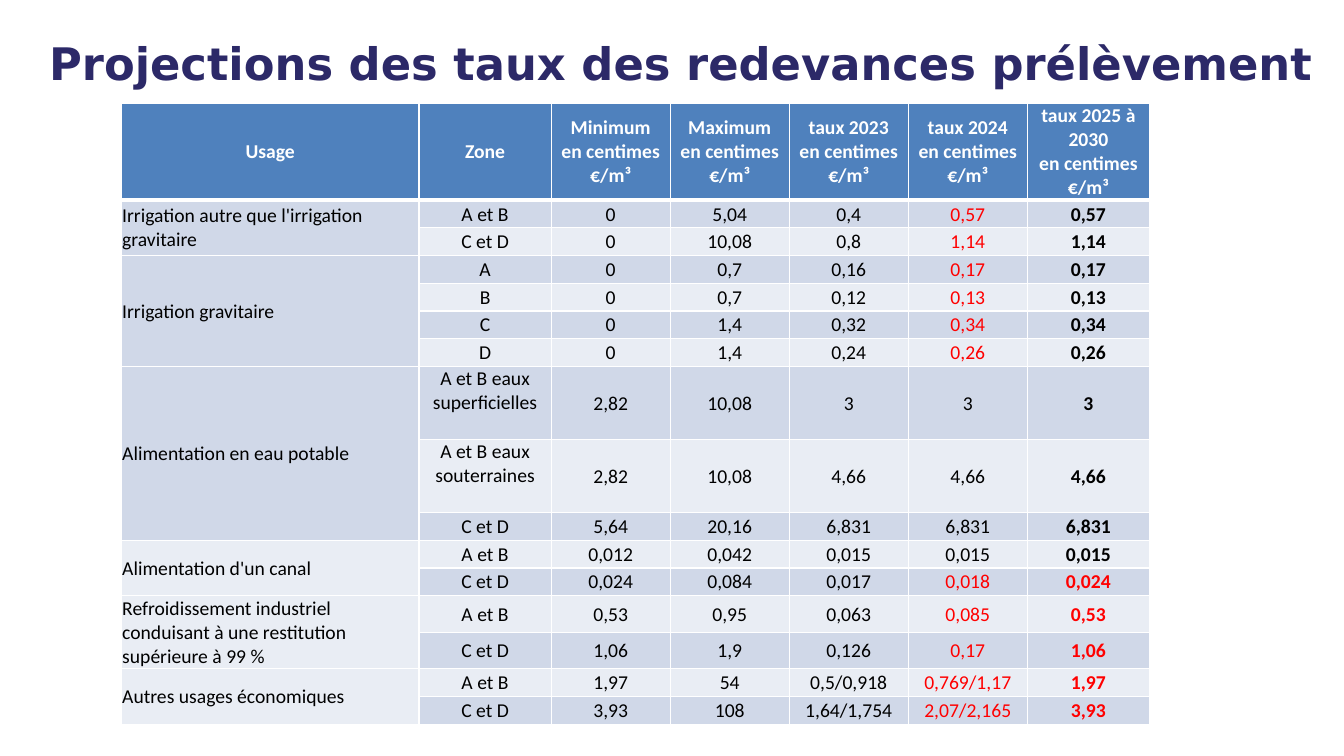
from lxml.etree import SubElement
from pptx import Presentation
from pptx.dml.color import RGBColor
from pptx.enum.text import MSO_ANCHOR as Anchor, PP_ALIGN as Align
from pptx.oxml.ns import qn
from pptx.util import Cm, Pt

NAVY = RGBColor(0x2C, 0x29, 0x68)
BLUE = RGBColor(0x4F, 0x81, 0xBD)
BAND_DARK = RGBColor(0xD0, 0xD8, 0xE8)
BAND_LIGHT = RGBColor(0xE9, 0xED, 0xF4)
WHITE = RGBColor(0xFF, 0xFF, 0xFF)
BLACK = RGBColor(0x00, 0x00, 0x00)
RED = RGBColor(0xFF, 0x00, 0x00)

UNIT = "en centimes €/m³"
HEADERS = ["Usage", "Zone"] + [
    f"{label}\n{UNIT}"
    for label in ("Minimum", "Maximum", "taux 2023", "taux 2024", "taux 2025 à 2030")
]
# Each usage with its rows: zone, minimum, maximum, rates 2023, 2024, 2025-2030
USAGES = [
    ("Irrigation autre que l'irrigation gravitaire", [
        ("A et B", "0", "5,04", "0,4", "0,57", "0,57"),
        ("C et D", "0", "10,08", "0,8", "1,14", "1,14"),
    ]),
    ("Irrigation gravitaire", [
        ("A", "0", "0,7", "0,16", "0,17", "0,17"),
        ("B", "0", "0,7", "0,12", "0,13", "0,13"),
        ("C", "0", "1,4", "0,32", "0,34", "0,34"),
        ("D", "0", "1,4", "0,24", "0,26", "0,26"),
    ]),
    ("Alimentation en eau potable", [
        ("A et B eaux superficielles", "2,82", "10,08", "3", "3", "3"),
        ("A et B eaux souterraines", "2,82", "10,08", "4,66", "4,66", "4,66"),
        ("C et D", "5,64", "20,16", "6,831", "6,831", "6,831"),
    ]),
    ("Alimentation d'un canal", [
        ("A et B", "0,012", "0,042", "0,015", "0,015", "0,015"),
        ("C et D", "0,024", "0,084", "0,017", "0,018", "0,024"),
    ]),
    ("Refroidissement industriel conduisant à une restitution supérieure à 99 %", [
        ("A et B", "0,53", "0,95", "0,063", "0,085", "0,53"),
        ("C et D", "1,06", "1,9", "0,126", "0,17", "1,06"),
    ]),
    ("Autres usages économiques", [
        ("A et B", "1,97", "54", "0,5/0,918", "0,769/1,17", "1,97"),
        ("C et D", "3,93", "108", "1,64/1,754", "2,07/2,165", "3,93"),
    ]),
]
COLUMN_WIDTHS = [7.5, 3.33, 3, 3, 3, 3, 3.08]
ROW_HEIGHTS = [2.44] + [0.7] * 6 + [1.84] * 2 + [0.7] * 3 + [0.92] * 2 + [0.7] * 2
RATE_2024, RATE_2025 = 5, 6


def write_text(frame, text, font="Calibri", size=14, color=BLACK, bold=False,
               align=Align.CENTER):
    frame.word_wrap = True
    paragraph = frame.paragraphs[0]
    paragraph.text = text.replace("\n", "\v")
    paragraph.alignment = align
    for run in paragraph.runs:
        run.font.name = font
        run.font.size = Pt(size)
        run.font.bold = bold
        run.font.color.rgb = color


def format_cell(cell, fill, top=1, bottom=1):
    """Set margins, white borders (widths in points) and fill."""
    cell.margin_left = cell.margin_right = cell.margin_top = Cm(0.02)
    cell.margin_bottom = Cm(0)
    cell.vertical_anchor = Anchor.MIDDLE
    properties = cell._tc.get_or_add_tcPr()
    for side, width in (("L", 1), ("R", 1), ("T", top), ("B", bottom)):
        line = SubElement(properties, qn(f"a:ln{side}"), w=str(Pt(width)))
        line_fill = SubElement(line, qn("a:solidFill"))
        SubElement(line_fill, qn("a:srgbClr"), val=str(WHITE))
    cell.fill.solid()
    cell.fill.fore_color.rgb = fill


presentation = Presentation()
presentation.slide_width = Cm(33.87)
presentation.slide_height = Cm(19.05)
slide = presentation.slides.add_slide(presentation.slide_layouts[6])

title = slide.shapes.add_textbox(Cm(0.48), Cm(0), Cm(33.38), Cm(3.18))
title.text_frame.vertical_anchor = Anchor.MIDDLE
write_text(title.text_frame, "Projections des taux des redevances prélèvement",
           font="DejaVu Sans", size=32, color=NAVY, bold=True)

table = slide.shapes.add_table(
    len(ROW_HEIGHTS), len(COLUMN_WIDTHS), Cm(3.06), Cm(2.6),
    Cm(sum(COLUMN_WIDTHS)), Cm(sum(ROW_HEIGHTS))).table
table.horz_banding = False
for column, width in zip(table.columns, COLUMN_WIDTHS):
    column.width = Cm(width)
for row, height in zip(table.rows, ROW_HEIGHTS):
    row.height = Cm(height)

for column_index, header in enumerate(HEADERS):
    cell = table.cell(0, column_index)
    format_cell(cell, BLUE, bottom=3)
    write_text(cell.text_frame, header, color=WHITE, bold=True)

row_index = 1
for usage, zone_rows in USAGES:
    usage_cell = table.cell(row_index, 0)
    usage_cell.merge(table.cell(row_index + len(zone_rows) - 1, 0))
    write_text(usage_cell.text_frame, usage, align=Align.LEFT)
    for values in zone_rows:
        band = BAND_DARK if row_index % 2 else BAND_LIGHT
        for cell in table.rows[row_index].cells:
            format_cell(cell, band, top=3 if row_index == 1 else 1)
        for column_index, value in enumerate(values, start=1):
            cell = table.cell(row_index, column_index)
            # A projected rate is red when it differs from the preceding one
            changed = column_index >= RATE_2024 and value != values[column_index - 2]
            write_text(cell.text_frame, value, color=RED if changed else BLACK,
                       bold=column_index == RATE_2025)
        if "eaux" in values[0]:
            table.cell(row_index, 1).vertical_anchor = Anchor.TOP
        row_index += 1

presentation.save("out.pptx")
